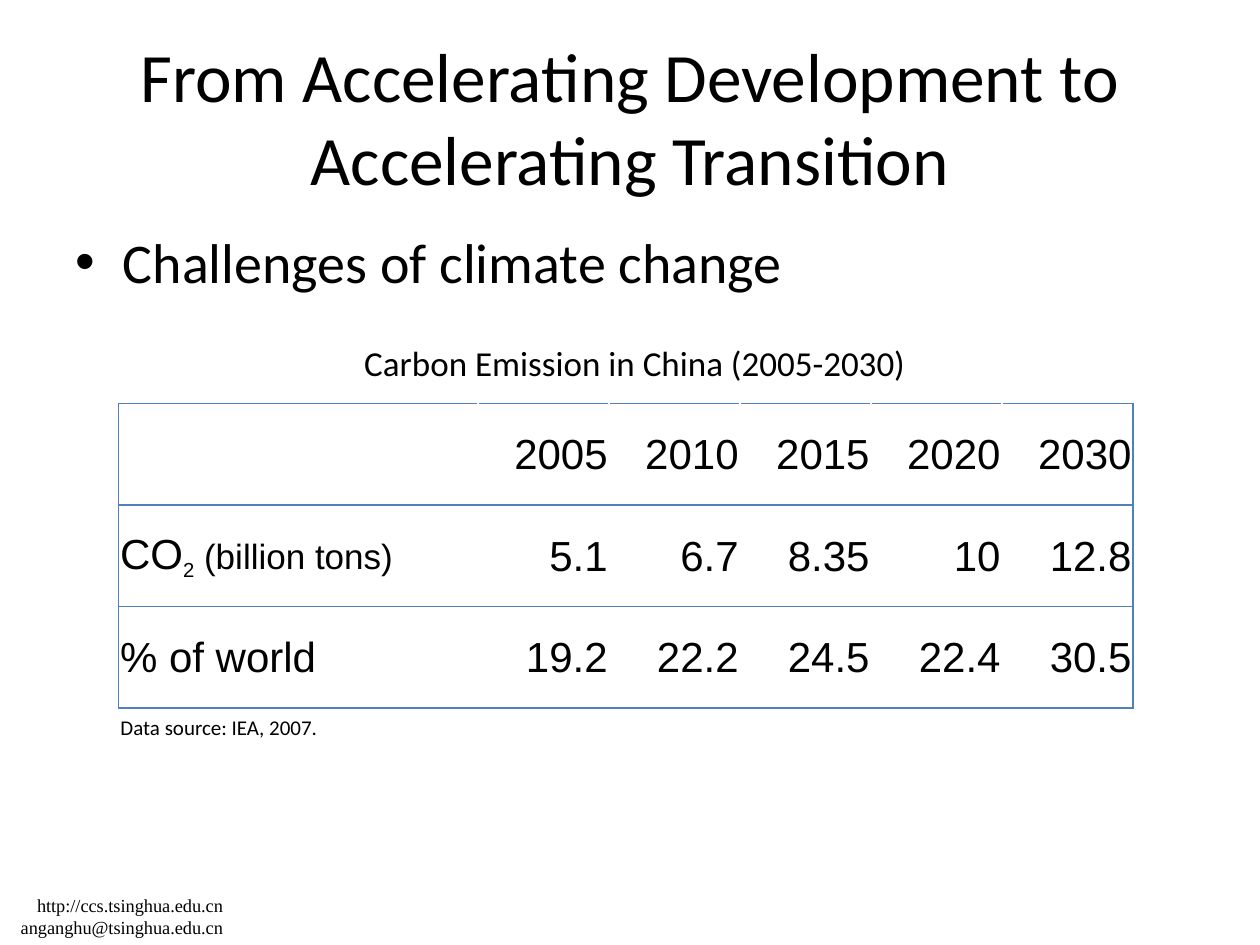
from dataclasses import dataclass

from lxml import etree
from pptx import Presentation
from pptx import util as u
from pptx.dml.color import RGBColor
from pptx.enum import text
from pptx.oxml import ns


@dataclass(frozen=True)
class Theme:
    """Colours, fonts and type sizes of the slide."""
    ink: str = "000000"
    paper: str = "FFFFFF"
    rule: str = "4F81BD"
    sans: str = "Calibri"
    data: str = "Arial"
    serif: str = "Times New Roman"
    title: float = 39.6
    body: float = 32
    cell: float = 24
    caption: float = 20
    source: float = 12
    footer: float = 10.5


THEME = Theme()
LEFT, CENTER, RIGHT = text.PP_ALIGN.LEFT, text.PP_ALIGN.CENTER, text.PP_ALIGN.RIGHT
YEARS = ["", "2005", "2010", "2015", "2020", "2030"]
EMISSIONS = ["CO", "5.1", "6.7", "8.35", "10", "12.8"]
SHARES = ["% of world", "19.2", "22.2", "24.5", "22.4", "30.5"]


def style(p, size, font=THEME.sans, align=LEFT):
    """Set the font and alignment of a paragraph."""
    p.alignment = align
    p.font.size, p.font.name = u.Pt(size), font
    p.font.color.rgb = RGBColor.from_string(THEME.ink)


def place(sp, left, top, width, height):
    """Move and size a shape, in centimetres."""
    sp.left, sp.top, sp.width, sp.height = map(u.Cm, (left, top, width, height))


def fill_placeholder(sp, box, content, size, align, anchor):
    """Position a template placeholder and write its text."""
    place(sp, *box)
    tf = sp.text_frame
    tf.auto_size = text.MSO_AUTO_SIZE.NONE
    tf.vertical_anchor = anchor
    tf.text = content
    style(tf.paragraphs[0], size, align=align)


def add_text(s, box, lines, size, font=THEME.sans, align=LEFT):
    """Add a wrapping text box with one paragraph per line."""
    tf = s.shapes.add_textbox(*map(u.Cm, box)).text_frame
    tf.word_wrap = True
    tf.text = "\n".join(lines)
    for p in tf.paragraphs:
        style(p, size, font, align)


def add_borders(cell, sides):
    """Rule the given sides of a cell."""
    tc_pr = cell._tc.get_or_add_tcPr()
    for side in sides:
        ln = etree.SubElement(tc_pr, ns.qn(f"a:ln{side}"), w=str(u.Pt(1)))
        solid = etree.SubElement(ln, ns.qn("a:solidFill"))
        etree.SubElement(solid, ns.qn("a:srgbClr"), val=THEME.rule)


def add_unit(p):
    """Append the subscript and the unit to the CO₂ label."""
    for content, baseline in (("2", -25000), (" (billion tons)", 0)):
        r = p.add_run()
        r.text = content
        r.font.size = u.Pt(THEME.caption)
        r._r.get_or_add_rPr().set("baseline", str(baseline))


def add_emissions_table(s, rows):
    """Add the ruled table of emissions by year."""
    frame = s.shapes.add_table(len(rows), len(YEARS), *map(u.Cm, (2.39, 8.13, 20.45, 6.15)))
    table = frame.table
    table.first_row = table.horz_banding = False
    for i, column in enumerate(table.columns):
        column.width = u.Cm(2.64 if i else 7.25)
    for row, values in zip(table.rows, rows):
        row.height = u.Cm(2.05)
        for i, (cell, value) in enumerate(zip(row.cells, values)):
            cell.margin_left = cell.margin_right = cell.margin_top = u.Cm(0.03)
            cell.margin_bottom = 0
            cell.vertical_anchor = text.MSO_ANCHOR.MIDDLE
            outer = {0: "L", len(values) - 1: "R"}.get(i, "")
            add_borders(cell, outer + "TB")
            cell.fill.solid()
            cell.fill.fore_color.rgb = RGBColor.from_string(THEME.paper)
            cell.text = value
            style(cell.text_frame.paragraphs[0], THEME.cell, THEME.data, RIGHT if i else LEFT)
    add_unit(table.cell(1, 0).text_frame.paragraphs[0])


def main():
    """Build and save the slide."""
    prs = Presentation()
    prs.slide_width, prs.slide_height = u.Cm(25.4), u.Cm(19.05)
    s = prs.slides.add_slide(prs.slide_layouts[1])
    fill_placeholder(s.shapes.title, (1.27, 0.76, 22.86, 3.18),
                     "From Accelerating Development to Accelerating Transition",
                     THEME.title, CENTER, text.MSO_ANCHOR.MIDDLE)
    fill_placeholder(s.placeholders[1], (1.27, 4.45, 22.86, 12.57),
                     "Challenges of climate change", THEME.body, LEFT, text.MSO_ANCHOR.TOP)
    add_emissions_table(s, [YEARS, EMISSIONS, SHARES])
    add_text(s, (6.55, 6.76, 12.5, 1.12), ["Carbon Emission in China (2005-2030)"],
             THEME.caption, align=CENTER)
    add_text(s, (2.18, 14.27, 12.7, 0.76), ["Data source: IEA, 2007."], THEME.source)
    add_text(s, (-0.2, 17.9, 4.95, 1.15),
             ["http://ccs.tsinghua.edu.cn", "anganghu@tsinghua.edu.cn"],
             THEME.footer, THEME.serif, RIGHT)
    prs.save("out.pptx")


if __name__ == "__main__":
    main()
